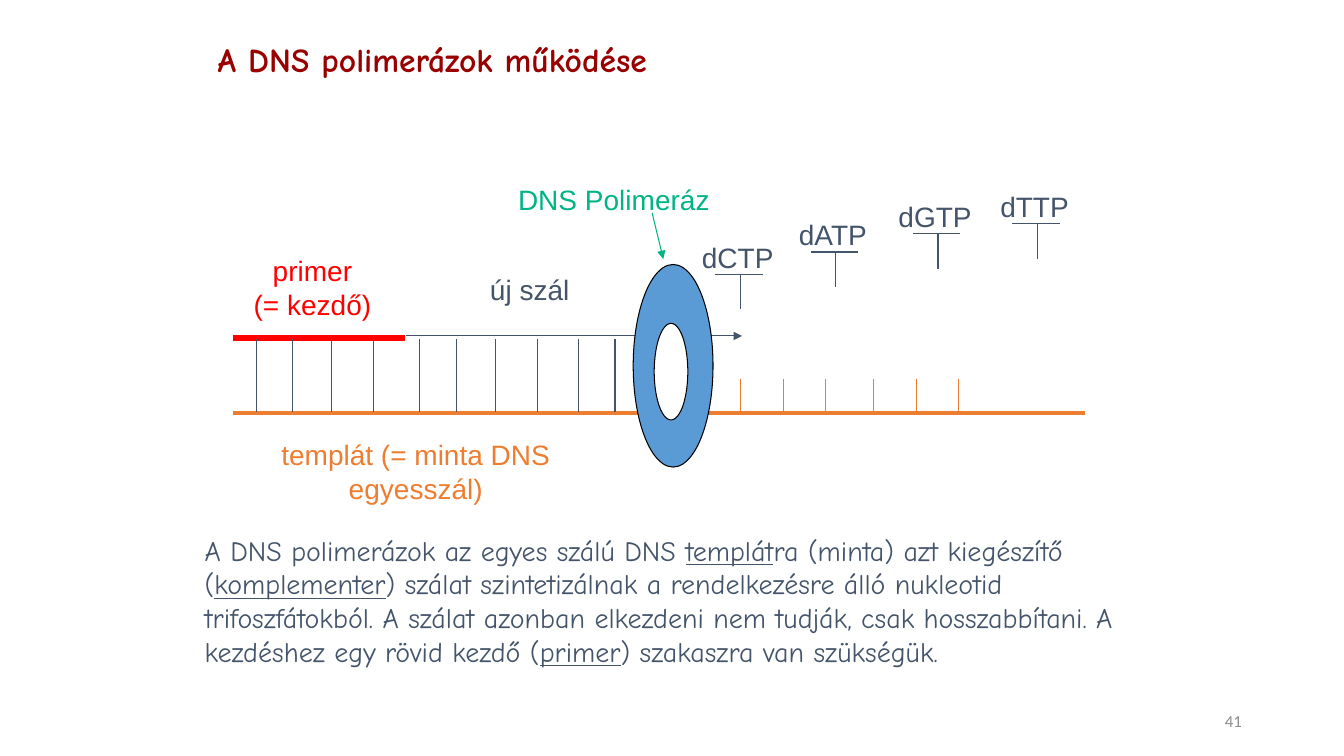
from itertools import product

from lxml import etree
from pptx import Presentation
from pptx import util as u
from pptx.dml import color
from pptx.enum import shapes, text
from pptx.oxml import ns

COLORS = {
    "title": "990000",
    "ink": "44546A",
    "template": "ED7D31",
    "primer": "FF0000",
    "enzyme": "5B9BD5",
    "enzyme_label": "00B485",
    "outline": "000000",
    "hole": "FFFFFF",
    "number": "8C8C8C",
}
ALIGN = text.PP_ALIGN
BASE_PAIR_STARTS = (183, 300, 413.3)
BASE_PAIR_OFFSETS = (0, 26, 54, 84)
FREE_BASE_STARTS = (529, 624)
FREE_BASE_OFFSETS = (0, 31, 61)
NUCLEOTIDES = [
    ("dATP", 597, 180),
    ("dCTP", 529, 196),
    ("dGTP", 670, 167),
    ("dTTP", 741, 160),
]
EXPLANATION = (
    "A DNS polimerázok az egyes szálú DNS _templát_ra (minta) azt kiegészítő "
    "(_komplementer_) szálat szintetizálnak a rendelkezésre álló nukleotid "
    "trifoszfátokból. A szálat azonban elkezdeni nem tudják, csak "
    "hosszabbítani. A kezdéshez egy rövid kezdő (_primer_) szakaszra van "
    "szükségük."
)


def rgb(name):
    return color.RGBColor.from_string(COLORS[name])


def place(shape, left, top, width, height):
    shape.left, shape.top = u.Pt(left), u.Pt(top)
    shape.width, shape.height = u.Pt(width), u.Pt(height)


def write_text(shape, content, tint="ink", size=20, font="Arial", bold=False,
               align=ALIGN.CENTER, anchor=text.MSO_ANCHOR.TOP, wrap=True,
               spacing=1.0, before=0):
    frame = shape.text_frame
    frame.word_wrap = wrap
    frame.auto_size = text.MSO_AUTO_SIZE.NONE
    frame.vertical_anchor = anchor
    for index, line in enumerate(content.split("\n")):
        paragraph = frame.add_paragraph() if index else frame.paragraphs[0]
        paragraph.alignment = align
        paragraph.line_spacing = spacing
        paragraph.space_before = u.Pt(before)
        for part, words in enumerate(line.split("_")):
            run = paragraph.add_run()
            run.text = words
            run.font.name = font
            run.font.size = u.Pt(size)
            run.font.bold = bold
            run.font.underline = part % 2 == 1
            run.font.color.rgb = rgb(tint)


def add_label(slide, content, left, top, width, height=31, **style):
    shape = slide.shapes.add_textbox(
        u.Pt(left), u.Pt(top), u.Pt(width), u.Pt(height))
    write_text(shape, content, **style)


def add_line(container, start, end, tint="ink", width=0.75, arrow=False):
    line = container.shapes.add_connector(
        shapes.MSO_CONNECTOR.STRAIGHT, *map(u.Pt, start + end))
    line.line.color.rgb = rgb(tint)
    line.line.width = u.Pt(width)
    properties = line.line._get_or_add_ln()
    if arrow:
        etree.SubElement(properties, ns.qn("a:tailEnd"), type="triangle")
    etree.SubElement(properties.getparent(), ns.qn("a:effectLst"))


def add_ellipse(container, left, top, width, height, fill):
    shape = container.shapes.add_shape(
        shapes.MSO_SHAPE.OVAL, u.Pt(left), u.Pt(top), u.Pt(width), u.Pt(height))
    shape.shadow.inherit = False
    shape.fill.solid()
    shape.fill.fore_color.rgb = rgb(fill)
    shape.line.color.rgb = rgb("outline")
    shape.line.width = u.Pt(0.75)


def add_rungs(slide, starts, offsets, top, bottom, tint):
    for start, offset in product(starts, offsets):
        x = start + offset
        add_line(slide, (x, top), (x, bottom), tint)


def add_nucleotide(slide, name, stem, bar):
    group = slide.shapes.add_group_shape()
    add_line(group, (stem - 18, bar), (stem + 16, bar))
    add_line(group, (stem, bar), (stem, bar + 25))
    add_label(slide, name, stem - 35, bar - 28, 66, wrap=False)


def add_polymerase(slide):
    group = slide.shapes.add_group_shape()
    add_ellipse(group, 452.3, 188.9, 57, 144.7, "enzyme")
    add_ellipse(group, 467.3, 231, 24, 69, "hole")


def fill_placeholders(slide):
    title, body = slide.shapes.title, slide.placeholders[1]
    place(title, 148.3, 15.1, 663, 57.6)
    write_text(title, "A DNS polimerázok működése", tint="title", size=24,
               font="Comic Neue", bold=True, align=ALIGN.LEFT,
               anchor=text.MSO_ANCHOR.MIDDLE, spacing=0.9)
    place(body, 139, 377.3, 679, 127.4)
    write_text(body, EXPLANATION, font="Comic Neue", align=ALIGN.LEFT, before=10)
    properties = body.text_frame.paragraphs[0]._p.get_or_add_pPr()
    properties.set("marL", "0")
    properties.set("indent", "0")
    etree.SubElement(properties, ns.qn("a:buNone"))


def main():
    presentation = Presentation()
    presentation.slide_width, presentation.slide_height = u.Pt(960), u.Pt(540)
    slide = presentation.slides.add_slide(presentation.slide_layouts[1])
    fill_placeholders(slide)

    add_line(slide, (166.3, 295.2), (774.7, 295.2), "template", 3)
    add_line(slide, (166.3, 241.2), (289.4, 241.2), "primer", 4.5)
    add_line(slide, (290.2, 240), (530, 240), arrow=True)
    add_rungs(slide, BASE_PAIR_STARTS, BASE_PAIR_OFFSETS, 242, 294, "ink")
    add_polymerase(slide)
    add_rungs(slide, FREE_BASE_STARTS, FREE_BASE_OFFSETS, 270.5, 295.5, "template")

    add_label(slide, "templát (= minta DNS egyesszál)", 182, 309, 230,
              tint="template")
    add_label(slide, "primer\n(= kezdő)", 174.2, 177.8, 98, 55.4,
              tint="primer", wrap=False)
    add_label(slide, "új szál ", 342.7, 190.8, 77, wrap=False)
    for nucleotide in NUCLEOTIDES:
        add_nucleotide(slide, *nucleotide)
    add_label(slide, "DNS Polimeráz", 363, 126.7, 151, tint="enzyme_label",
              wrap=False)
    add_line(slide, (465.8, 152), (473.8, 185), "enzyme_label", arrow=True)
    add_label(slide, "41", 678.2, 500.4, 216, 28.8, tint="number", size=12,
              font="Calibri", align=ALIGN.RIGHT, anchor=text.MSO_ANCHOR.MIDDLE)
    presentation.save("out.pptx")


if __name__ == "__main__":
    main()
